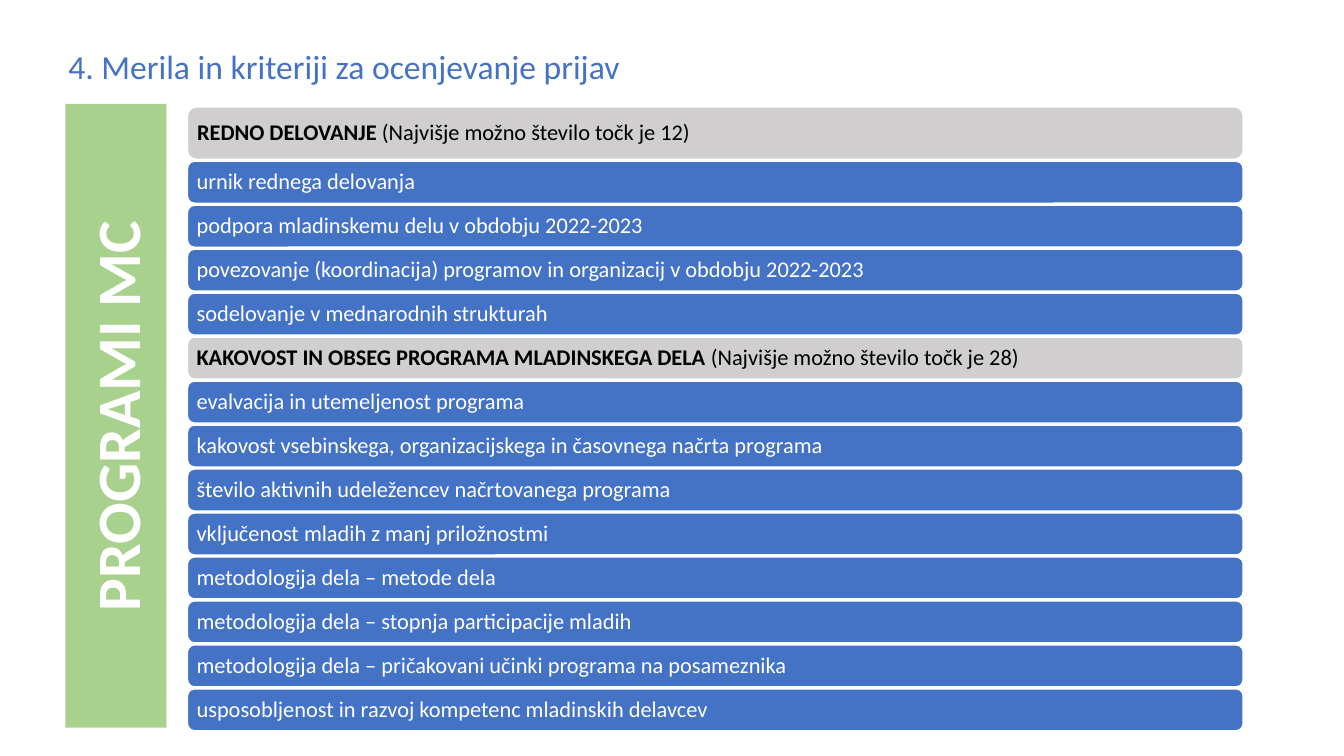
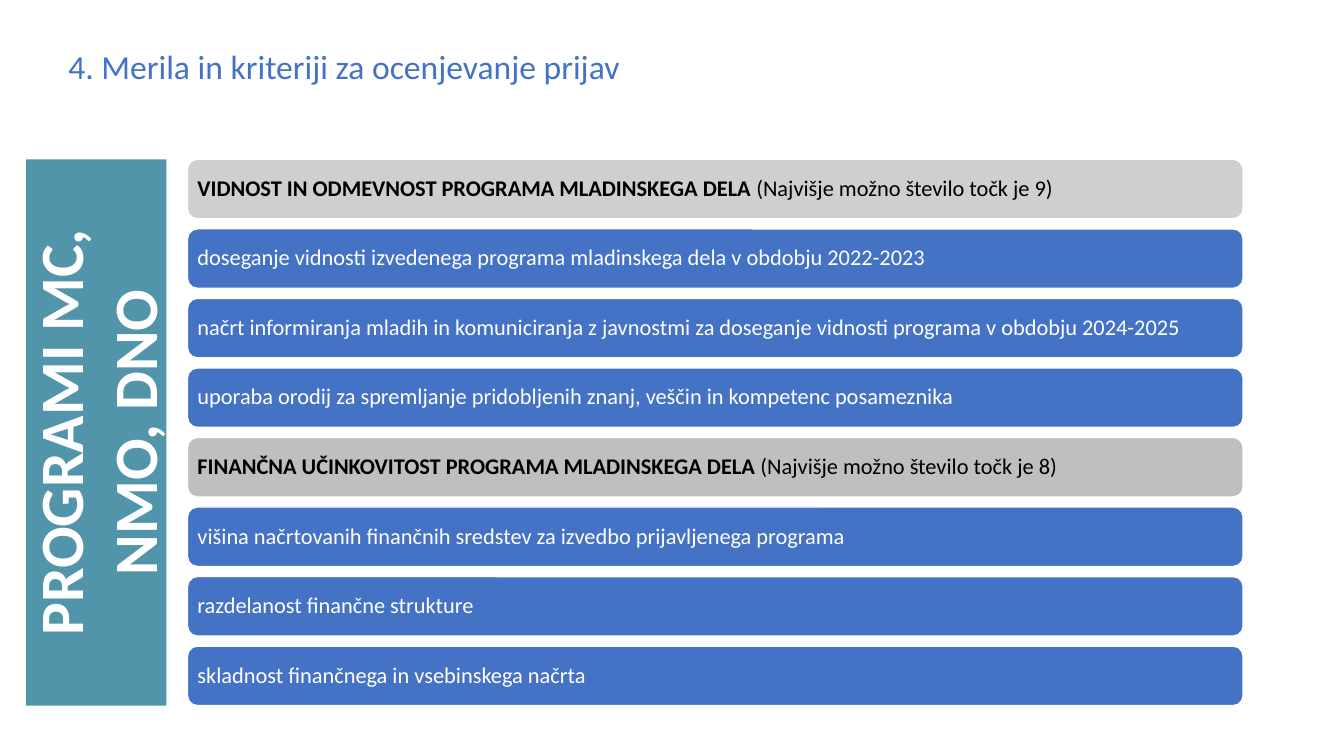
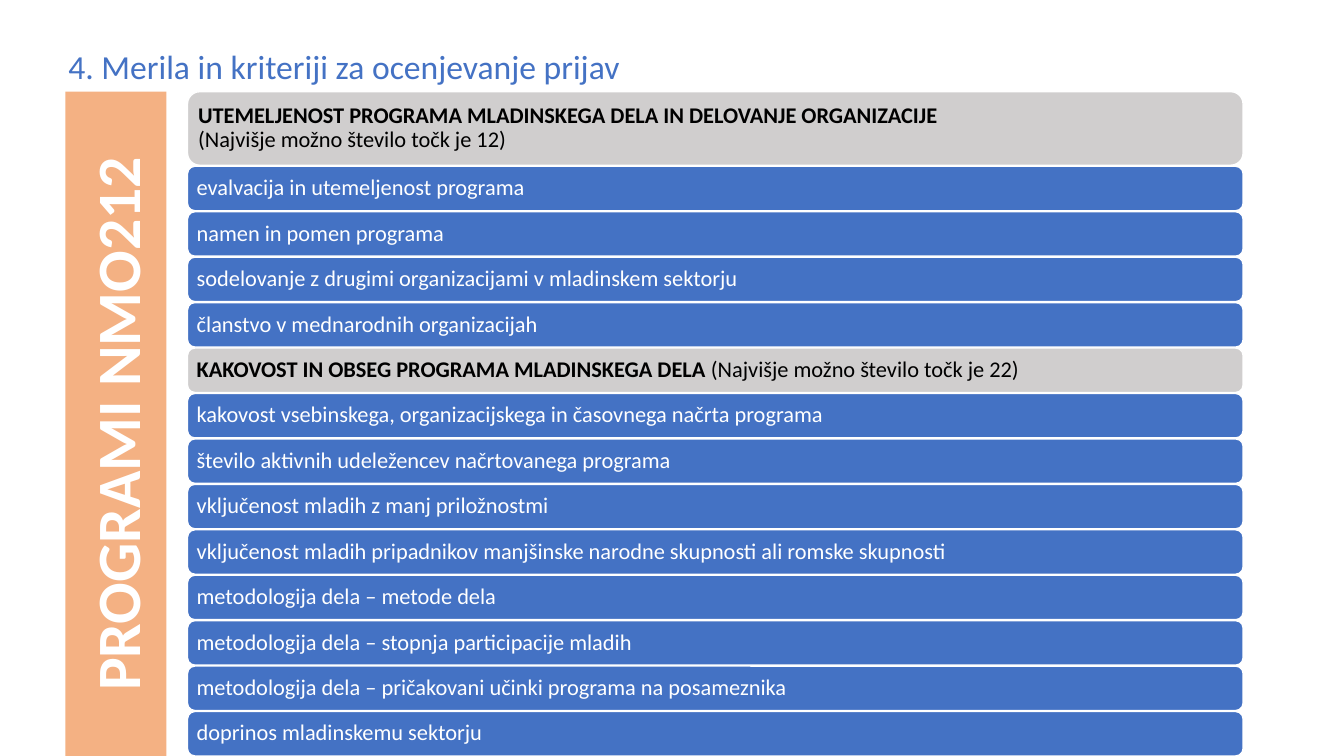
import pptx
import pptx.util
import pptx.dml.color
import pptx.enum.shapes
import pptx.enum.text

Inches = pptx.util.Inches
Pt = pptx.util.Pt
Shape = pptx.enum.shapes.MSO_SHAPE
Align = pptx.enum.text.PP_ALIGN
Anchor = pptx.enum.text.MSO_ANCHOR

FONT = "Calibri"
COLORS = {
    "blue": "4472C4", "white": "FFFFFF", "black": "000000",
    "gray": "D0CECE", "dark": "BFBFBF",
    "green": "A9D18E", "teal": "5294AA", "peach": "F4B183",
}
TITLE = "4. Merila in kriteriji za ocenjevanje prijav"
LIST_LEFT, LIST_WIDTH = 1.86, 10.47
BAND_RIGHT = 1.65


def color(name):
    """Return the named colour."""
    return pptx.dml.color.RGBColor.from_string(COLORS[name])


def add_run(para, text, size, ink, bold=False):
    """Add one styled run to a paragraph."""
    run = para.add_run()
    run.text = text
    run.font.name = FONT
    run.font.size = Pt(size)
    run.font.bold = bold
    run.font.color.rgb = color(ink)


def add_box(slide, kind, box, fill):
    """Add a flat filled shape with its text centred in height."""
    shape = slide.shapes.add_shape(kind, *map(Inches, box))
    shape.shadow.inherit = False
    shape.fill.solid()
    shape.fill.fore_color.rgb = color(fill)
    shape.line.fill.background()
    shape.text_frame.word_wrap = True
    shape.text_frame.vertical_anchor = Anchor.MIDDLE
    return shape


def add_title(slide):
    """Add the shared slide title."""
    box = slide.shapes.add_textbox(*map(Inches, (0.58, 0.41, 5.72, 0.5)))
    frame = box.text_frame
    frame.word_wrap = False
    frame.auto_size = pptx.enum.text.MSO_AUTO_SIZE.SHAPE_TO_FIT_TEXT
    add_run(frame.paragraphs[0], TITLE, 24, "blue")


def add_band(slide, box, text, fill):
    """Add the side band with its text turned upwards."""
    band = add_box(slide, Shape.RECTANGLE, box, fill)
    band.element.txBody.bodyPr.set("vert", "vert270")
    para = band.text_frame.paragraphs[0]
    para.alignment = Align.CENTER
    add_run(para, text, 44, "white", True)


def add_row(slide, box, row):
    """Add one bar, either a heading or a criterion."""
    fill, ink, lines = row
    bar = add_box(slide, Shape.ROUNDED_RECTANGLE, box, fill)
    bar.line.color.rgb = color("white")
    bar.line.width = Pt(1)
    frame = bar.text_frame
    frame.margin_left = frame.margin_right = Inches(0.07)
    frame.margin_top = frame.margin_bottom = Inches(0.07)
    for i, line in enumerate(lines):
        para = frame.add_paragraph() if i else frame.paragraphs[0]
        para.alignment = Align.LEFT
        para.line_spacing = 0.9
        for text, bold in line:
            add_run(para, text, 16, ink, bold)


def add_list(slide, box, rows, first, gap):
    """Stack rows in the box, the first with its own height."""
    left, top, width, height = box
    start = top + first + gap
    pitch = (top + height + gap - start) / (len(rows) - 1)
    add_row(slide, (left, top, width, first), rows[0])
    for i, row in enumerate(rows[1:]):
        add_row(slide, (left, start + i * pitch, width, pitch - gap), row)


def head(name, points, fill="gray", split=False):
    """Describe a heading row with its highest score."""
    note = (f"(Najvišje možno število točk je {points})", False)
    if split:
        return fill, "black", [[(name, True)], [note]]
    return fill, "black", [[(name + " ", True), note]]


def items(*texts):
    """Describe criterion rows."""
    return [("blue", "white", [[(text, False)]]) for text in texts]


QUALITY = "KAKOVOST IN OBSEG PROGRAMA MLADINSKEGA DELA"
EVAL = "evalvacija in utemeljenost programa"
SHARED = (
    "kakovost vsebinskega, organizacijskega in časovnega načrta programa",
    "število aktivnih udeležencev načrtovanega programa",
    "vključenost mladih z manj priložnostmi",
)
METHODS = (
    "metodologija dela – metode dela",
    "metodologija dela – stopnja participacije mladih",
    "metodologija dela – pričakovani učinki programa na posameznika",
)

SLIDES = [
    {
        "band": ("PROGRAMI MC", "green", 0.65, 1.03, 6.19),
        "list": (1.06, 6.19, 0.52, 0.02),
        "rows": [
            head("REDNO DELOVANJE", 12),
            *items(
                "urnik rednega delovanja",
                "podpora mladinskemu delu v obdobju 2022-2023",
                "povezovanje (koordinacija) programov in organizacij v obdobju 2022-2023",
                "sodelovanje v mednarodnih strukturah",
            ),
            head(QUALITY, 28),
            *items(EVAL, *SHARED, *METHODS,
                   "usposobljenost in razvoj kompetenc mladinskih delavcev"),
        ],
    },
    {
        "band": ("PROGRAMI MC, NMO, DNO", "teal", 0.26, 1.58, 5.42),
        "list": (1.58, 5.42, 0.59, 0.1),
        "rows": [
            head("VIDNOST IN ODMEVNOST PROGRAMA MLADINSKEGA DELA", 9),
            *items(
                "doseganje vidnosti izvedenega programa mladinskega dela v obdobju 2022-2023",
                "načrt informiranja mladih in komuniciranja z javnostmi "
                "za doseganje vidnosti programa v obdobju 2024-2025",
                "uporaba orodij za spremljanje pridobljenih znanj, veščin in kompetenc posameznika",
            ),
            head("FINANČNA UČINKOVITOST PROGRAMA MLADINSKEGA DELA", 8, "dark"),
            *items(
                "višina načrtovanih finančnih sredstev za izvedbo prijavljenega programa",
                "razdelanost finančne strukture",
                "skladnost finančnega in vsebinskega načrta",
            ),
        ],
    },
    {
        "band": ("PROGRAMI NMO212", "peach", 0.65, 0.91, 6.59),
        "list": (0.91, 6.59, 0.73, 0.01),
        "rows": [
            head("UTEMELJENOST PROGRAMA MLADINSKEGA DELA IN DELOVANJE ORGANIZACIJE",
                 12, split=True),
            *items(
                EVAL,
                "namen in pomen programa",
                "sodelovanje z drugimi organizacijami v mladinskem sektorju",
                "članstvo v mednarodnih organizacijah",
            ),
            head(QUALITY, 22),
            *items(
                *SHARED,
                "vključenost mladih pripadnikov manjšinske narodne skupnosti ali romske skupnosti",
                *METHODS,
                "doprinos mladinskemu sektorju",
            ),
        ],
    },
]


def add_slide(deck, data):
    """Build one criteria slide."""
    slide = deck.slides.add_slide(deck.slide_layouts[6])
    add_title(slide)
    text, fill, left, top, height = data["band"]
    add_band(slide, (left, top, BAND_RIGHT - left, height), text, fill)
    top, height, first, gap = data["list"]
    add_list(slide, (LIST_LEFT, top, LIST_WIDTH, height), data["rows"], first, gap)


def main():
    """Build and save the deck."""
    deck = pptx.Presentation()
    deck.slide_width = Inches(13.33)
    deck.slide_height = Inches(7.5)
    for data in SLIDES:
        add_slide(deck, data)
    deck.save("out.pptx")


if __name__ == "__main__":
    main()
